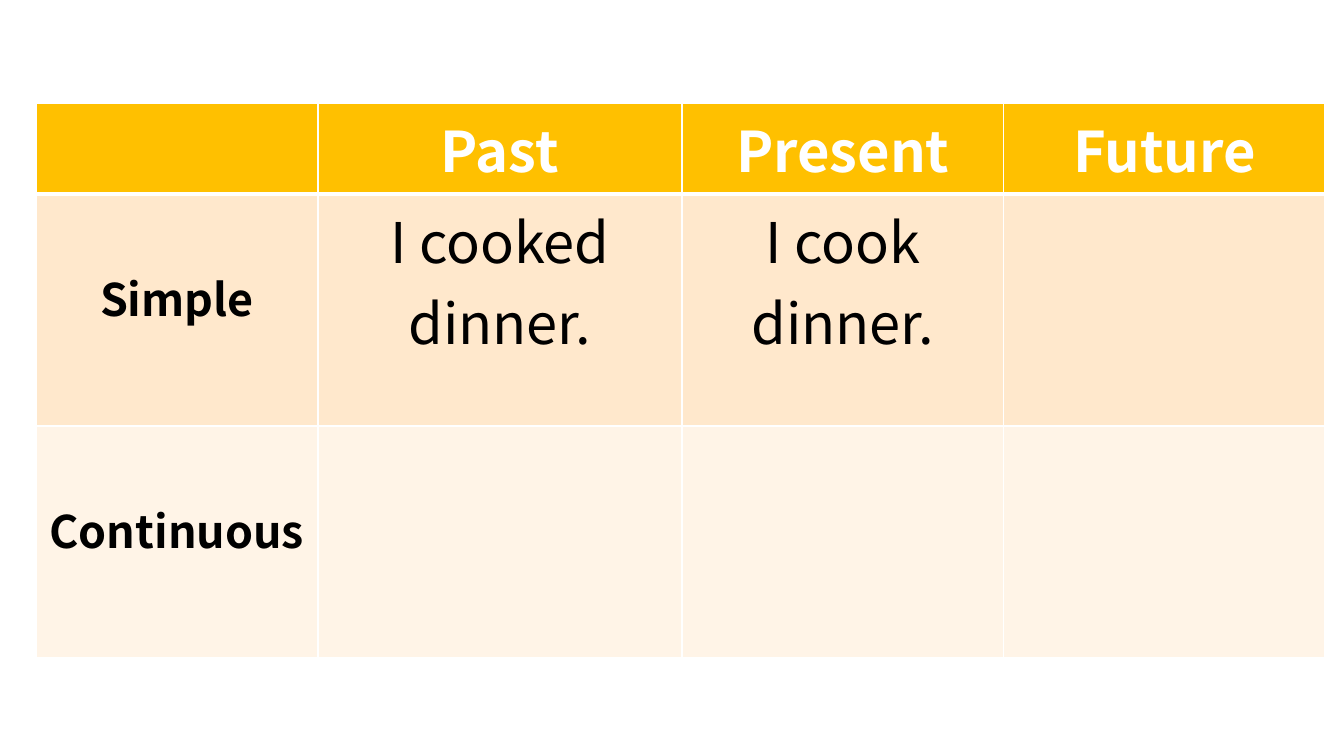
from lxml import etree
from pptx import Presentation
from pptx import util as u
from pptx.dml.color import RGBColor
from pptx.enum import text
from pptx.oxml import ns

SCALE = 914400 / 100.8
FONT = "Noto Sans CJK JP"
HEX = {"head": "FFC000", "odd": "FFE8CC", "even": "FFF4E7",
       "white": "FFFFFF", "black": "000000"}
FORMATS = {
    "head": {"size": u.Pt(40), "bold": True, "name": FONT},
    "side": {"size": u.Pt(32), "bold": True, "name": FONT},
    "body": {"size": u.Pt(40), "bold": False, "name": FONT},
}
COLS = [282, 364, 322, 321]
ROWS = [87, 232, 232]
FILLS = ["head", "odd", "even"]
TENSES = [
    ["", "Past", "Present", "Future"],
    ["Simple", "I cooked dinner.", "I cook dinner.", ""],
    ["Continuous", "", "", ""],
]


def px(n):
    return u.Emu(round(n * SCALE))


def rule(cell, row):
    """Draw white borders, thicker below the header row."""
    props = cell._tc.get_or_add_tcPr()
    thick = {(0, "B"), (1, "T")}
    for i, side in enumerate("LRTB"):
        width = u.Pt(3 if (row, side) in thick else 1)
        line = etree.Element(ns.qn(f"a:ln{side}"), w=str(width))
        fill = etree.SubElement(line, ns.qn("a:solidFill"))
        etree.SubElement(fill, ns.qn("a:srgbClr"), val=HEX["white"])
        props.insert(i, line)


def write(cell, words, kind):
    para = cell.text_frame.paragraphs[0]
    para.alignment = text.PP_ALIGN.CENTER
    font = para.font
    if words:
        run = para.add_run()
        run.text = words
        font = run.font
    for key, value in FORMATS[kind].items():
        setattr(font, key, value)
    ink = "white" if kind == "head" else "black"
    font.color.rgb = RGBColor.from_string(HEX[ink])
    if kind == "side":
        cell.margin_top = px(70)


def tense_grid(slide, left, top):
    frame = slide.shapes.add_table(len(ROWS), len(COLS), px(left), px(top),
                                   px(sum(COLS)), px(sum(ROWS)))
    grid = frame.table
    for col, width in zip(grid.columns, COLS):
        col.width = px(width)
    for r, line in enumerate(TENSES):
        grid.rows[r].height = px(ROWS[r])
        for c, words in enumerate(line):
            cell = grid.cell(r, c)
            cell.fill.solid()
            cell.fill.fore_color.rgb = RGBColor.from_string(HEX[FILLS[r]])
            rule(cell, r)
            write(cell, words, "head" if r == 0 else "body" if c else "side")


def main():
    deck = Presentation()
    deck.slide_width, deck.slide_height = px(1344), px(756)
    slide = deck.slides.add_slide(deck.slide_layouts[6])
    tense_grid(slide, 36, 103)
    deck.save("out.pptx")


if __name__ == "__main__":
    main()
